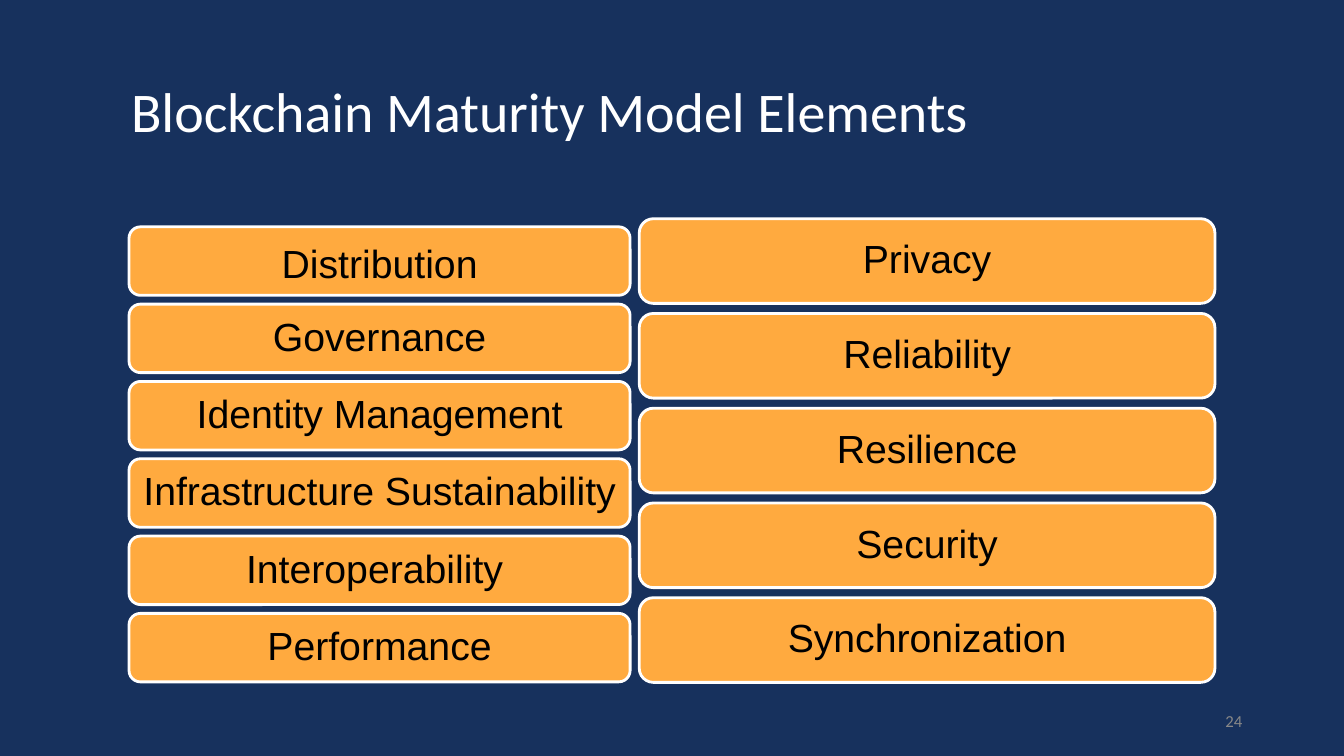
from pptx import Presentation
from pptx.dml.color import RGBColor
from pptx.enum.shapes import MSO_SHAPE
from pptx.enum.text import MSO_ANCHOR, PP_ALIGN
from pptx.util import Inches, Pt

TITLE = "Blockchain Maturity Model Elements"
PAGE = "24"
COLUMNS = [
    {"left": 1.28, "top": 2.25, "width": 4.97, "height": 0.68, "pitch": 0.767,
     "items": ["Distribution", "Governance", "Identity Management",
               "Infrastructure Sustainability", "Interoperability", "Performance"]},
    {"left": 6.34, "top": 2.17, "width": 5.71, "height": 0.84, "pitch": 0.94,
     "items": ["Privacy", "Reliability", "Resilience", "Security", "Synchronization"]},
]
INSET = 0.09
INSETS = {"Distribution": (INSET, 0.14, INSET, 0.04),
          "Interoperability": (0.04, INSET, 0.14, INSET)}


def color(code):
    return RGBColor.from_string(code)


def write(sp, text, size, font, code, align, insets, spacing=None):
    tf = sp.text_frame
    tf.word_wrap = True
    tf.vertical_anchor = MSO_ANCHOR.MIDDLE
    tf.margin_left, tf.margin_top, tf.margin_right, tf.margin_bottom = map(Inches, insets)
    p = tf.paragraphs[0]
    p.alignment = align
    p.line_spacing = spacing
    r = p.add_run()
    r.text = text
    r.font.size = Pt(size)
    r.font.name = font
    r.font.color.rgb = color(code)


def add_element(s, text, *box):
    sp = s.shapes.add_shape(MSO_SHAPE.ROUNDED_RECTANGLE, *map(Inches, box))
    sp.shadow.inherit = False
    sp.adjustments[0] = 0.167
    sp.fill.solid()
    sp.fill.fore_color.rgb = color("FFAA3F")
    sp.line.color.rgb = color("FFFFFF")
    sp.line.width = Pt(2)
    write(sp, text, 28, "Arial", "000000", PP_ALIGN.CENTER,
          INSETS.get(text, (INSET,) * 4), 0.9)


prs = Presentation()
prs.slide_width, prs.slide_height = Inches(13.33), Inches(7.5)
s = prs.slides.add_slide(prs.slide_layouts[6])
s.background.fill.solid()
s.background.fill.fore_color.rgb = color("17315D")

title = s.shapes.add_textbox(*map(Inches, (0.92, 0.41, 11.5, 1.45)))
write(title, TITLE, 40, "Calibri", "FFFFFF", PP_ALIGN.LEFT, (0.38, 0.13, 0.13, 0.13), 0.9)
number = s.shapes.add_textbox(*map(Inches, (9.42, 6.95, 3, 0.4)))
write(number, PAGE, 12, "Calibri", "888888", PP_ALIGN.RIGHT, (0.1, 0.05, 0.1, 0.05))

for col in COLUMNS:
    for i, item in enumerate(col["items"]):
        add_element(s, item, col["left"], col["top"] + i * col["pitch"],
                    col["width"], col["height"])

prs.save("out.pptx")
